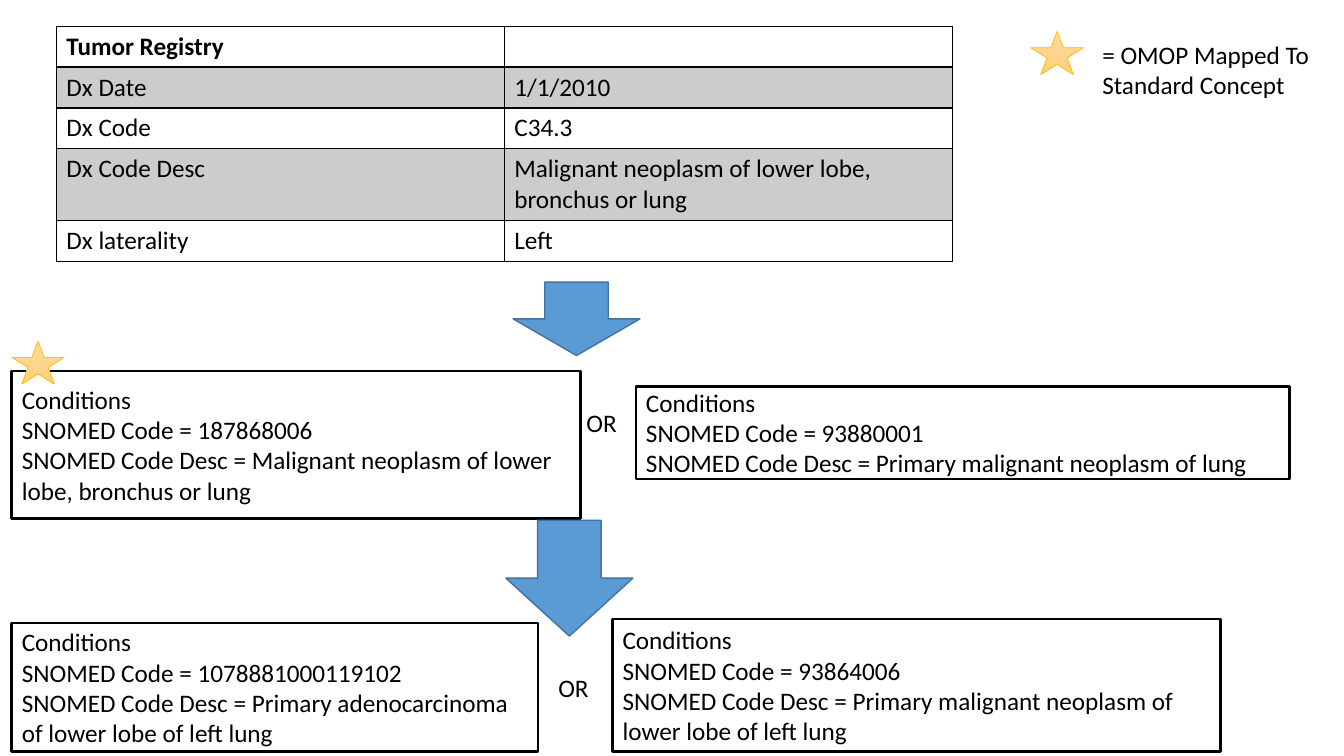
from lxml import etree
from pptx import Presentation
from pptx import util as u
from pptx.dml.color import RGBColor
from pptx.enum import shapes, text
from pptx.oxml import ns

BLACK = RGBColor(0x00, 0x00, 0x00)
WHITE = RGBColor(0xFF, 0xFF, 0xFF)
ARROW_FILL = RGBColor(0x5B, 0x9B, 0xD5)
ARROW_LINE = RGBColor(0x43, 0x73, 0x9E)
STAR_TOP = RGBColor(0xFF, 0xDB, 0x9E)
STAR_BOTTOM = RGBColor(0xFF, 0xD0, 0x7C)
STAR_LINE = RGBColor(0xFF, 0xC0, 0x00)

REGISTRY = [
    ("Tumor Registry", ""),
    ("Dx Date", "1/1/2010"),
    ("Dx Code", "C34.3"),
    ("Dx Code Desc", "Malignant neoplasm of lower lobe, bronchus or lung"),
    ("Dx laterality", "Left"),
]
ROW_HEIGHTS = [1.03, 1.03, 1.03, 1.8, 1.03]

# Left, top, width, height, SNOMED code, description
CONDITIONS = [
    (0.3, 9.35, 14.33, 3.71, "187868006",
     "Malignant neoplasm of lower lobe, bronchus or lung"),
    (0.3, 15.7, 13.26, 3.23, "1078881000119102",
     "Primary adenocarcinoma of lower lobe of left lung"),
    (16.03, 9.73, 16.46, 2.34, "93880001",
     "Primary malignant neoplasm of lung"),
    (15.44, 15.6, 15.32, 3.33, "93864006",
     "Primary malignant neoplasm of lower lobe of left lung"),
]


def format_text(text_frame, bold=False):
    for paragraph in text_frame.paragraphs:
        paragraph.alignment = text.PP_ALIGN.LEFT
        for run in paragraph.runs:
            run.font.name = "Calibri"
            run.font.size = u.Pt(18)
            run.font.bold = bold
            run.font.color.rgb = BLACK


def add_shape(slide, kind, left, top, width, height, line, line_width):
    shape = slide.shapes.add_shape(
        kind, u.Cm(left), u.Cm(top), u.Cm(width), u.Cm(height))
    shape.shadow.inherit = False
    shape.line.color.rgb = line
    shape.line.width = u.Pt(line_width)
    return shape


def add_condition(slide, left, top, width, height, code, description):
    shape = add_shape(slide, shapes.MSO_SHAPE.RECTANGLE,
                      left, top, width, height, BLACK, 2)
    shape.fill.solid()
    shape.fill.fore_color.rgb = WHITE
    text_frame = shape.text_frame
    text_frame.text = (f"Conditions\nSNOMED Code = {code}\n"
                       f"SNOMED Code Desc = {description}")
    text_frame.word_wrap = True
    text_frame.vertical_anchor = text.MSO_ANCHOR.MIDDLE
    format_text(text_frame)


def add_arrow(slide, left, top, height):
    shape = add_shape(slide, shapes.MSO_SHAPE.DOWN_ARROW,
                      left, top, 3.2, height, ARROW_LINE, 1)
    shape.fill.solid()
    shape.fill.fore_color.rgb = ARROW_FILL


def add_star(slide, left, top):
    shape = add_shape(slide, shapes.MSO_SHAPE.STAR_5_POINT,
                      left, top, 1.32, 1.09, STAR_LINE, 0.5)
    shape.fill.gradient()
    shape.fill.gradient_angle = 270
    for stop, color in zip(shape.fill.gradient_stops, (STAR_TOP, STAR_BOTTOM)):
        stop.color.rgb = color


def add_label(slide, left, top, width, height, label, wrap=False):
    box = slide.shapes.add_textbox(
        u.Cm(left), u.Cm(top), u.Cm(width), u.Cm(height))
    box.text_frame.text = label
    box.text_frame.word_wrap = wrap
    format_text(box.text_frame)


def set_borders(cell, widths):
    properties = cell._tc.get_or_add_tcPr()
    for side, width in widths.items():
        line = etree.SubElement(properties, ns.qn(f"a:ln{side}"),
                                w=str(u.Pt(width)))
        fill = etree.SubElement(line, ns.qn("a:solidFill"))
        etree.SubElement(fill, ns.qn("a:srgbClr"), val=str(BLACK))


def shade(cell):
    cell.fill.solid()
    cell.fill.fore_color.rgb = BLACK
    color = cell._tc.tcPr.find(".//" + ns.qn("a:solidFill") + "[last()]")
    color = cell._tc.tcPr.find(ns.qn("a:solidFill"))[0]
    etree.SubElement(color, ns.qn("a:alpha"), val="20000")


def add_registry(slide):
    table = slide.shapes.add_table(
        len(REGISTRY), 2, u.Cm(1.42), u.Cm(0.66),
        u.Cm(22.58), u.Cm(sum(ROW_HEIGHTS))).table
    table.first_row = table.horz_banding = False
    for row, height in zip(table.rows, ROW_HEIGHTS):
        row.height = u.Cm(height)
    for r, values in enumerate(REGISTRY):
        for c, value in enumerate(values):
            cell = table.cell(r, c)
            cell.text = value
            format_text(cell.text_frame, bold=r == 0)
            # The header row is closed by a thicker rule
            set_borders(cell, {"L": 1, "R": 1, "T": 2 if r == 1 else 1,
                               "B": 2 if r == 0 else 1})
            if r % 2:
                shade(cell)
            else:
                cell.fill.background()


def main():
    presentation = Presentation()
    presentation.slide_width = u.Cm(33.87)
    presentation.slide_height = u.Cm(19.05)
    slide = presentation.slides.add_slide(presentation.slide_layouts[6])

    # Source record
    add_registry(slide)

    # Mapped conditions and the steps between them
    for condition in CONDITIONS:
        add_condition(slide, *condition)
    add_arrow(slide, 12.93, 7.11, 1.85)
    add_arrow(slide, 12.75, 13.11, 2.92)
    for left, top in ((14.53, 10.13), (13.82, 16.81)):
        add_label(slide, left, top, 1.27, 1.02, "OR")

    # Standard concept marker and its legend
    add_star(slide, 0.3, 8.59)
    add_star(slide, 25.98, 0.79)
    add_label(slide, 27.53, 0.86, 6.05, 1.8,
              "= OMOP Mapped To Standard Concept", wrap=True)

    presentation.save("out.pptx")


if __name__ == "__main__":
    main()
